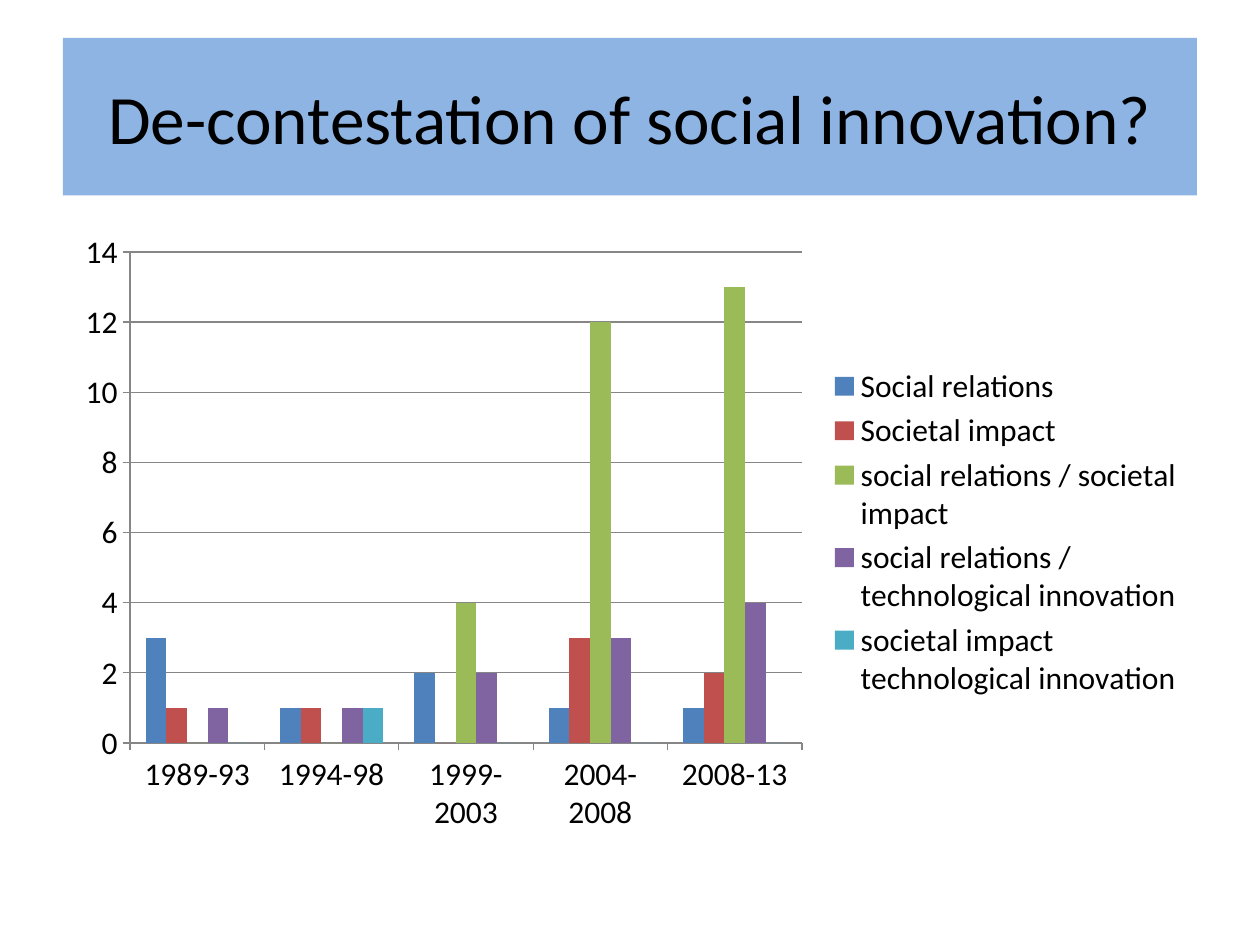
from pptx import Presentation
from pptx.chart.data import CategoryChartData
from pptx.dml.color import RGBColor
from pptx.enum.chart import XL_CHART_TYPE as ChartType
from pptx.enum.chart import XL_LEGEND_POSITION as LegendPosition
from pptx.enum.chart import XL_TICK_MARK as TickMark
from pptx.enum.shapes import MSO_SHAPE as ShapeType
from pptx.enum.text import MSO_ANCHOR as Anchor
from pptx.enum.text import PP_ALIGN as Align
from pptx.util import Inches, Pt

BLACK = RGBColor(0x00, 0x00, 0x00)
LIGHT_BLUE = RGBColor(0x8E, 0xB4, 0xE3)
GREY = RGBColor(0x86, 0x86, 0x86)
BLUE = RGBColor(0x4F, 0x81, 0xBD)
RED = RGBColor(0xC0, 0x50, 0x4D)
GREEN = RGBColor(0x9B, 0xBB, 0x59)
PURPLE = RGBColor(0x80, 0x64, 0xA2)
TEAL = RGBColor(0x4B, 0xAC, 0xC6)

WIDTH, HEIGHT = Inches(10), Inches(7.5)
# Shares of the slide: left, top, width, height
TITLE_AREA = (0.05, 0.04, 0.9, 1 / 6)
CHART_AREA = (0.05, 7 / 30, 0.9, 0.66)

TITLE_FONT = {"name": "Calibri", "size": Pt(39.6)}
CHART_FONT = {"name": "Calibri", "size": Pt(18)}

PERIODS = ["1989-93", "1994-98", "1999-2003", "2004-2008", "2008-13"]
MEANINGS = [
    ("Social relations", (3, 1, 2, 1, 1), BLUE),
    ("Societal impact", (1, 1, 0, 3, 2), RED),
    ("social relations / societal impact", (0, 0, 4, 12, 13), GREEN),
    ("social relations / technological innovation", (1, 1, 2, 3, 4), PURPLE),
    ("societal impact technological innovation", (0, 1, 0, 0, 0), TEAL),
]


def place(area):
    """Turn shares of the slide into left, top, width and height."""
    return [round(share * length) for share, length in zip(area, (WIDTH, HEIGHT) * 2)]


def set_values(target, values):
    for name, value in values.items():
        setattr(target, name, value)


def set_font(font, values):
    set_values(font, values)
    font.color.rgb = BLACK


def set_line(line):
    line.color.rgb = GREY
    line.width = Pt(0.75)


def add_title_band(slide, text):
    band = slide.shapes.add_shape(ShapeType.RECTANGLE, *place(TITLE_AREA))
    band.shadow.inherit = False
    band.fill.solid()
    band.fill.fore_color.rgb = LIGHT_BLUE
    band.line.fill.background()
    set_values(band.text_frame, {"word_wrap": True, "vertical_anchor": Anchor.MIDDLE})
    paragraph = band.text_frame.paragraphs[0]
    paragraph.alignment = Align.CENTER
    run = paragraph.add_run()
    run.text = text
    set_font(run.font, TITLE_FONT)


def format_axes(chart):
    for axis in (chart.category_axis, chart.value_axis):
        set_values(axis, {"major_tick_mark": TickMark.OUTSIDE,
                          "minor_tick_mark": TickMark.NONE})
        set_line(axis.format.line)
    set_values(chart.value_axis, {"minimum_scale": 0, "maximum_scale": 14,
                                  "major_unit": 2, "has_major_gridlines": True})
    set_line(chart.value_axis.major_gridlines.format.line)


def add_column_chart(slide):
    data = CategoryChartData()
    data.categories = PERIODS
    for name, values, _ in MEANINGS:
        data.add_series(name, values)
    frame = slide.shapes.add_chart(ChartType.COLUMN_CLUSTERED, *place(CHART_AREA), data)
    chart = frame.chart
    set_values(chart, {"has_title": False, "has_legend": True})
    set_values(chart.legend, {"position": LegendPosition.RIGHT,
                              "include_in_layout": False})
    set_font(chart.font, CHART_FONT)
    format_axes(chart)
    plot = chart.plots[0]
    set_values(plot, {"gap_width": 150, "overlap": 0, "vary_by_categories": False})
    for series, (_, _, color) in zip(plot.series, MEANINGS):
        series.invert_if_negative = False
        series.format.fill.solid()
        series.format.fill.fore_color.rgb = color


def main():
    presentation = Presentation()
    set_values(presentation, {"slide_width": WIDTH, "slide_height": HEIGHT})
    slide = presentation.slides.add_slide(presentation.slide_layouts[6])
    add_title_band(slide, "De-contestation of social innovation?")
    add_column_chart(slide)
    presentation.save("out.pptx")


if __name__ == "__main__":
    main()
